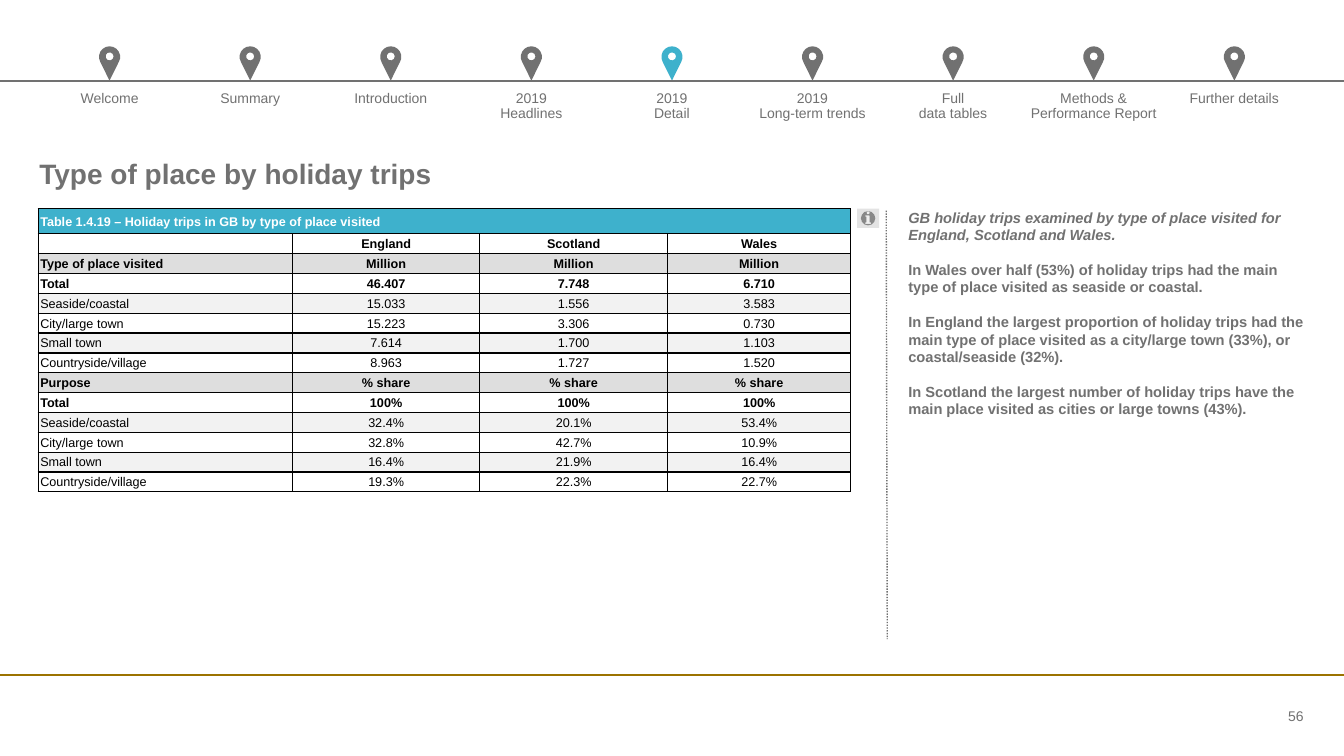
from math import cos, sin, radians
from pptx import Presentation
from pptx.dml.color import RGBColor
from pptx.enum.dml import MSO_LINE
from pptx.enum.shapes import MSO_CONNECTOR, MSO_SHAPE
from pptx.enum.text import MSO_ANCHOR as ANCHOR, PP_ALIGN as ALIGN
from pptx.oxml import parse_xml
from pptx.oxml.ns import nsdecls
from pptx.util import Inches, Pt

GREY = RGBColor(0x71, 0x71, 0x71)
TEAL = RGBColor(0x3E, 0xB1, 0xCC)
GOLD = RGBColor(0x9C, 0x73, 0x00)
BLACK = RGBColor(0, 0, 0)
WHITE = RGBColor(0xFF, 0xFF, 0xFF)
HEAD_FILL = RGBColor(0xDE, 0xDE, 0xDE)
BAND_FILL = RGBColor(0xF2, 0xF2, 0xF2)
BUTTON_FILL = RGBColor(0xE3, 0xE3, 0xE3)

# Content
STEPS = ["Welcome", "Summary", "Introduction", "2019\nHeadlines", "2019\nDetail",
         "2019\nLong-term trends", "Full\vdata tables",
         "Methods & Performance Report", "Further details"]
ACTIVE = 4
TITLE = "Type of place by holiday trips"
ROWS = [
    ("Table 1.4.19 – Holiday trips in GB by type of place visited", "", "", ""),
    ("", "England", "Scotland", "Wales"),
    ("Type of place visited", "Million", "Million", "Million"),
    ("Total", "46.407", "7.748", "6.710"),
    ("Seaside/coastal", "15.033", "1.556", "3.583"),
    ("City/large town", "15.223", "3.306", "0.730"),
    ("Small town", "7.614", "1.700", "1.103"),
    ("Countryside/village", "8.963", "1.727", "1.520"),
    ("Purpose", "% share", "% share", "% share"),
    ("Total", "100%", "100%", "100%"),
    ("Seaside/coastal", "32.4%", "20.1%", "53.4%"),
    ("City/large town", "32.8%", "42.7%", "10.9%"),
    ("Small town", "16.4%", "21.9%", "16.4%"),
    ("Countryside/village", "19.3%", "22.3%", "22.7%"),
]
COL_WIDTHS = [2.52, 1.86, 1.86, 1.82]
ROW_FILLS = {"Type of place visited": HEAD_FILL, "Purpose": HEAD_FILL,
             "Seaside/coastal": BAND_FILL, "Small town": BAND_FILL}
BOLD_ROWS = {"", "Type of place visited", "Purpose", "Total"}
NOTES = [
    "GB holiday trips examined by type of place visited for England, Scotland and Wales.",
    "In Wales over half (53%) of holiday trips had the main type of place visited "
    "as seaside or coastal.",
    "In England the largest proportion of holiday trips had the main type of place "
    "visited as a city/large town (33%), or coastal/seaside (32%).",
    "In Scotland the largest number of holiday trips have the main place visited "
    "as cities or large towns (43%).",
]
PAGE = "56"

# Layout
W, H = 13.33, 7.5
MARGIN = 0.39
STEP_W = (W - 2 * MARGIN) / len(STEPS)
AXIS_Y = 0.8
BODY_Y = 2.07
UNITS = 1000  # freeform units per inch

prs = Presentation()
prs.slide_width, prs.slide_height = Inches(W), Inches(H)
slide = prs.slides.add_slide(prs.slide_layouts[6])
shapes = slide.shapes


def style(p, size, color, bold=False, align=ALIGN.LEFT):
    p.alignment = align
    f = p.font
    f.name, f.size, f.bold, f.color.rgb = "Arial", Pt(size), bold, color


def add_text(x, y, w, h, lines, size, bold=False, align=ALIGN.LEFT,
             anchor=ANCHOR.TOP, gap=0):
    tf = shapes.add_textbox(Inches(x), Inches(y), Inches(w), Inches(h)).text_frame
    tf.word_wrap, tf.vertical_anchor = True, anchor
    tf.margin_left = tf.margin_top = tf.margin_right = tf.margin_bottom = 0
    tf.text = "\n".join(lines)
    for i, p in enumerate(tf.paragraphs):
        style(p, size, GREY, bold, align)
        p.space_before = Pt(gap if i else 0)
    return tf


def add_line(x1, y1, x2, y2, color, width, dash=None):
    c = shapes.add_connector(MSO_CONNECTOR.STRAIGHT, Inches(x1), Inches(y1),
                             Inches(x2), Inches(y2))
    c.line.color.rgb, c.line.width = color, Pt(width)
    if dash:
        c.line.dash_style = dash
    c._element.spPr.append(parse_xml(f"<a:effectLst {nsdecls('a')}/>"))


def add_grid(x, y, widths, heights):
    tbl = shapes.add_table(len(heights), len(widths), Inches(x), Inches(y),
                           Inches(sum(widths)), Inches(sum(heights))).table
    tbl.first_row = tbl.horz_banding = False
    for col, w in zip(tbl.columns, widths):
        col.width = Inches(w)
    for row, h in zip(tbl.rows, heights):
        row.height = Inches(h)
    return tbl


def fill_cell(cell, text, size, color, bold, align, anchor, margins, fill=None):
    cell.text, cell.vertical_anchor = text, anchor
    (cell.margin_left, cell.margin_top,
     cell.margin_right, cell.margin_bottom) = map(Inches, margins)
    for p in cell.text_frame.paragraphs:
        style(p, size, color, bold, align)
        if not text:
            p._p.append(parse_xml(f'<a:endParaRPr {nsdecls("a")} sz="{size * 100}"/>'))
    if fill is None:
        cell.fill.background()
    else:
        cell.fill.solid()
        cell.fill.fore_color.rgb = fill


def border_cell(cell):
    for i, side in enumerate(("lnL", "lnR", "lnT", "lnB")):
        cell._tc.get_or_add_tcPr().insert(i, parse_xml(
            f'<a:{side} {nsdecls("a")} w="12700"><a:solidFill>'
            f'<a:srgbClr val="{BLACK}"/></a:solidFill></a:{side}>'))


def arc(cx, cy, radius, start, end, step):
    return [(UNITS * (cx + radius * cos(radians(a))),
             UNITS * (cy + radius * sin(radians(a))))
            for a in range(start, end + 1, step)]


def add_pin(cx, color):
    cy = 0.565
    head = arc(cx, cy, 0.105, 150, 390, 20)
    hole = arc(cx, cy - 0.005, 0.04, 0, 360, 40)[::-1]
    fb = shapes.build_freeform(UNITS * cx, UNITS * AXIS_Y, scale=Inches(1) / UNITS)
    fb.add_line_segments(head)
    fb.move_to(*hole[0])
    fb.add_line_segments(hole[1:])
    sp = fb.convert_to_shape()
    sp.shadow.inherit = False
    sp.fill.solid()
    sp.fill.fore_color.rgb = color
    sp.line.fill.background()


# Navigation bar
nav = add_grid(MARGIN, 0.9, [STEP_W] * len(STEPS), [0.35])
for i, step in enumerate(STEPS):
    fill_cell(nav.cell(0, i), step, 10, GREY, False, ALIGN.CENTER, ANCHOR.TOP, (0,) * 4)
    add_pin(MARGIN + (i + 0.5) * STEP_W, TEAL if i == ACTIVE else GREY)
add_line(0, AXIS_Y, W, AXIS_Y, GREY, 1.25)

# Title
add_text(MARGIN, 1.55, W - 2 * MARGIN, 0.35, [TITLE], 20, bold=True)

# Trips table
trips = add_grid(0.38, BODY_Y, COL_WIDTHS, [0.25] + [0.197] * (len(ROWS) - 1))
for r, row in enumerate(ROWS):
    for c, text in enumerate(row):
        cell = trips.cell(r, c)
        fill_cell(cell, text, 9, BLACK if r else WHITE,
                  r == 0 or row[0] in BOLD_ROWS,
                  ALIGN.CENTER if c else ALIGN.LEFT, ANCHOR.MIDDLE,
                  (0.01 if c else 0.02, 0.01, 0.01, 0),
                  ROW_FILLS.get(row[0]) if r else TEAL)
        border_cell(cell)
trips.cell(0, 0).merge(trips.cell(0, len(COL_WIDTHS) - 1))

# Information button and divider
info = shapes.add_shape(MSO_SHAPE.ACTION_BUTTON_INFORMATION, Inches(8.5),
                        Inches(BODY_Y), Inches(0.22), Inches(0.19))
info.shadow.inherit = False
info.fill.solid()
info.fill.fore_color.rgb = BUTTON_FILL
info.line.fill.background()
add_line(8.79, 2.09, 8.8, 6.34, GREY, 1, MSO_LINE.ROUND_DOT)

# Commentary
notes = add_text(9.01, BODY_Y, 3.93, 4.18, NOTES, 10.5, bold=True, gap=12)
notes.paragraphs[0].font.italic = True

# Footer
add_line(0, 6.7, W, 6.7, GOLD, 1.5)
add_text(11.87, 6.99, 1.06, 0.22, [PAGE], 10, align=ALIGN.RIGHT, anchor=ANCHOR.MIDDLE)

prs.save("out.pptx")
